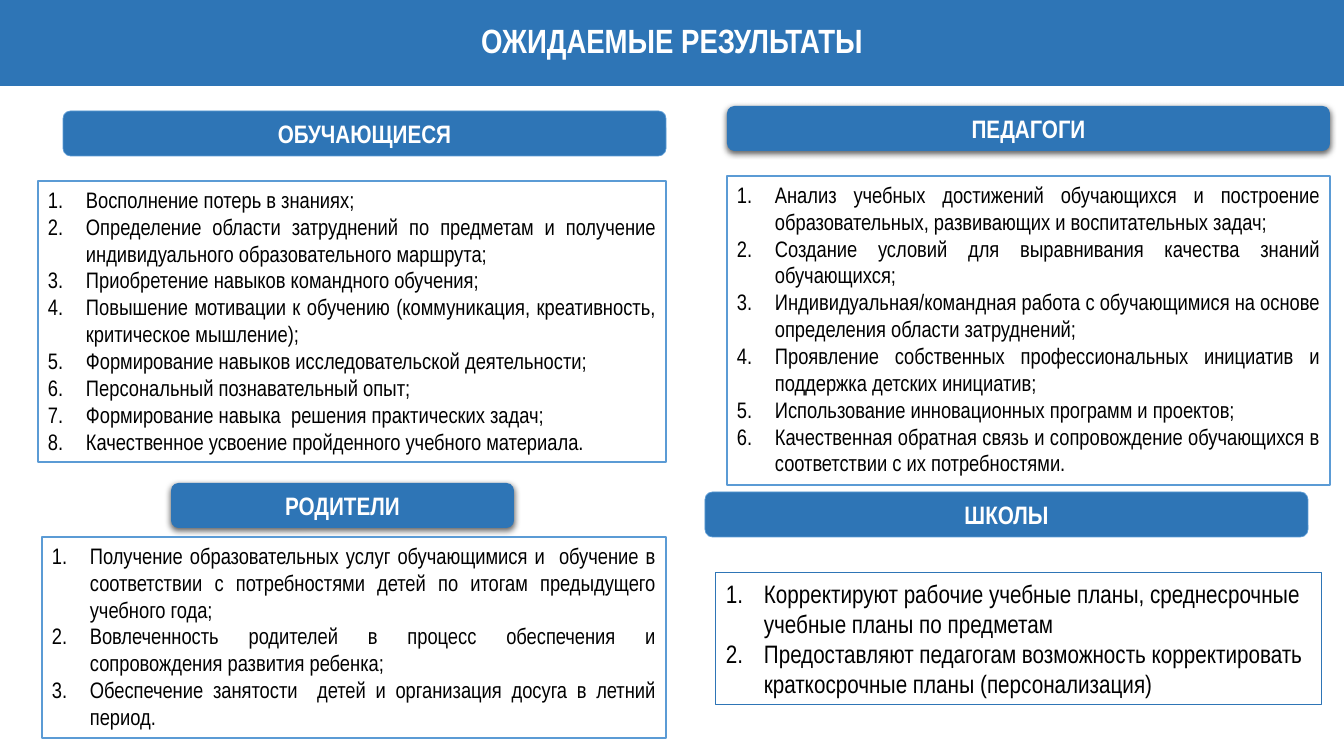
from lxml.etree import SubElement
from pptx import Presentation
from pptx.dml.color import RGBColor
from pptx.enum.shapes import MSO_SHAPE
from pptx.enum.text import MSO_ANCHOR, PP_ALIGN
from pptx.oxml.ns import qn
from pptx.util import Emu, Pt

SCALE = 914400 / 100.8


def px(count):
    return Emu(round(count * SCALE))


def color(text):
    return RGBColor.from_string(text)


class Deck:
    font = "Arial Narrow"
    blue, edge, white, black = "2E75B6", "5B9BD5", "FFFFFF", "000000"

    def __init__(self):
        self.file = Presentation()
        self.file.slide_width = px(1344)
        self.file.slide_height = px(756)
        self.slide = self.file.slides.add_slide(self.file.slide_layouts[6])

    def shape(self, kind, box, fill=None, line=None, width=1):
        item = self.slide.shapes.add_shape(kind, *map(px, box))
        item.shadow.inherit = False
        if fill:
            item.fill.solid()
            item.fill.fore_color.rgb = color(fill)
        else:
            item.fill.background()
        if line:
            item.line.color.rgb = color(line)
            item.line.width = Pt(width)
        else:
            item.line.fill.background()
        item.text_frame.word_wrap = True
        return item

    def style(self, para, size, tint, align, bold=False):
        para.alignment = align
        para.font.name = self.font
        para.font.size = Pt(size)
        para.font.bold = bold
        para.font.color.rgb = color(tint)

    def label(self, item, text, size):
        frame = item.text_frame
        frame.vertical_anchor = MSO_ANCHOR.MIDDLE
        frame.text = text
        self.style(frame.paragraphs[0], size, self.white, PP_ALIGN.CENTER, True)

    def title(self, box, text):
        item = self.shape(MSO_SHAPE.RECTANGLE, box, self.blue)
        item.text_frame.margin_bottom = px(11)
        self.label(item, text, 24)

    def header(self, box, text, raised):
        line = None if raised else self.edge
        item = self.shape(MSO_SHAPE.ROUNDED_RECTANGLE, box, self.blue, line, 0.5)
        if raised:
            self.shade(item)
        self.label(item, text, 18)

    def shade(self, item):
        effects = item._element.spPr.find(qn("a:effectLst"))
        outer = SubElement(effects, qn("a:outerShdw"), blurRad=str(Pt(4.5)),
                           dist=str(Pt(1.5)), dir="5400000", rotWithShape="0")
        tint = SubElement(outer, qn("a:srgbClr"), val=self.black)
        SubElement(tint, qn("a:alpha"), val="63000")

    def panel(self, box, lines, size=16, align=PP_ALIGN.JUSTIFY,
              fill="FFFFFF", line="5B9BD5", width=1):
        item = self.shape(MSO_SHAPE.RECTANGLE, box, fill, line, width)
        frame = item.text_frame
        frame.vertical_anchor = MSO_ANCHOR.TOP
        frame.text = "\n".join(lines)
        for para in frame.paragraphs:
            self.style(para, size, self.black, align)
            props = para._p.get_or_add_pPr()
            props.set("marL", str(px(38)))
            props.set("indent", str(-px(38)))
            bullet = props.makeelement(qn("a:buAutoNum"), {"type": "arabicPeriod"})
            props.insert(0, bullet)


def main():
    deck = Deck()
    deck.title((0, 0, 1344, 86), "ОЖИДАЕМЫЕ РЕЗУЛЬТАТЫ")

    deck.panel((38, 181, 628, 281), [
        "Восполнение потерь в знаниях;",
        "Определение области затруднений по предметам и получение "
        "индивидуального образовательного маршрута;",
        "Приобретение навыков командного обучения;",
        "Повышение мотивации к обучению (коммуникация, креативность, "
        "критическое мышление);",
        "Формирование навыков исследовательской деятельности;",
        "Персональный познавательный опыт;",
        "Формирование навыка  решения практических задач;",
        "Качественное усвоение пройденного учебного материала.",
    ])
    deck.header((63, 111, 603, 45), "ОБУЧАЮЩИЕСЯ", False)
    deck.header((727, 106, 603, 45), "ПЕДАГОГИ", True)
    deck.header((171, 483, 343, 45), "РОДИТЕЛИ", True)
    deck.panel((727, 176, 603, 309), [
        "Анализ учебных достижений обучающихся и построение "
        "образовательных, развивающих и воспитательных задач;",
        "Создание условий для выравнивания качества знаний обучающихся;",
        "Индивидуальная/командная работа с обучающимися на основе "
        "определения области затруднений;",
        "Проявление собственных профессиональных инициатив и "
        "поддержка детских инициатив;",
        "Использование инновационных программ и проектов;",
        "Качественная обратная связь и сопровождение обучающихся в "
        "соответствии с их потребностями.",
    ])
    deck.panel((42, 537, 624, 201), [
        "Получение образовательных услуг обучающимися и  обучение в "
        "соответствии с потребностями детей по итогам предыдущего учебного года;",
        "Вовлеченность родителей в процесс обеспечения и "
        "сопровождения развития ребенка;",
        "Обеспечение занятости  детей и организация досуга в летний период.",
    ])
    deck.header((705, 492, 603, 45), "ШКОЛЫ", False)
    deck.panel((716, 573, 606, 132), [
        "Корректируют рабочие учебные планы, среднесрочные "
        "учебные планы по предметам",
        "Предоставляют педагогам возможность корректировать "
        "краткосрочные планы (персонализация)",
    ], 18, PP_ALIGN.LEFT, None, deck.blue, 0.75)

    deck.file.save("out.pptx")


if __name__ == "__main__":
    main()
